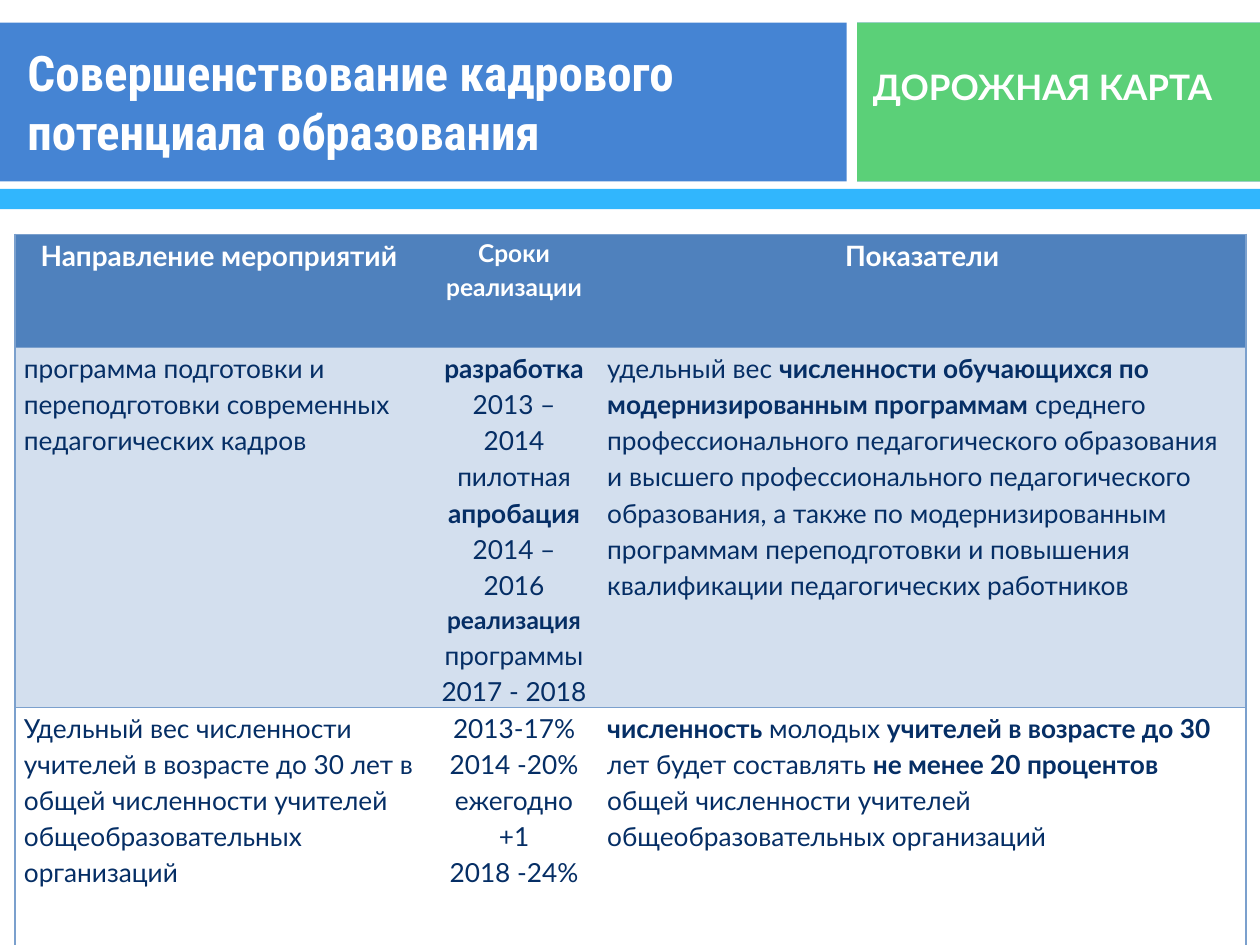
from lxml import etree
from pptx import Presentation
from pptx.dml.color import RGBColor
from pptx.enum.shapes import MSO_SHAPE
from pptx.enum.text import MSO_ANCHOR, PP_ALIGN
from pptx.oxml.ns import qn
from pptx.util import Inches, Pt

RECT = MSO_SHAPE.RECTANGLE
MIDDLE = MSO_ANCHOR.MIDDLE
LEFT, CENTER = PP_ALIGN.LEFT, PP_ALIGN.CENTER

WHITE = RGBColor(0xFF, 0xFF, 0xFF)
BLUE = RGBColor(0x45, 0x84, 0xD3)
SKY = RGBColor(0x31, 0xB6, 0xFD)
GREEN = RGBColor(0x5B, 0xD0, 0x78)
HEADER = RGBColor(0x4F, 0x81, 0xBD)
BAND = RGBColor(0xD3, 0xDF, 0xEE)
NAVY = RGBColor(0x05, 0x2E, 0x65)
BORDER = RGBColor(0x7B, 0xA0, 0xCD)

BODY_FONT, TITLE_FONT = "Lato", "Roboto Condensed"
COL_WIDTHS = (3.29, 1.34, 5.14)
COL_MARGINS = (0.07, 0.09, 0.07)
ROW_HEIGHTS = (0.9, 2.85, 1.94)
ROW_FILLS = (HEADER, BAND, None)

# Each cell is a list of paragraphs, each paragraph a list of (text, size, bold) runs.
HEADINGS = [
    [[("Направление мероприятий ", 16, True)]],
    [[("Сроки реализации", 14, True)]],
    [[("Показатели", 16, True)]],
]
TRAINING = [
    [[("программа подготовки и переподготовки современных педагогических кадров", 15, False)]],
    [
        [("разработка", 15, True)],
        [("2013 – 2014", 15, False)],
        [("пилотная ", 15, False), ("апробация", 15, True)],
        [("2014 – 2016", 15, False)],
        [("реализация ", 14, True), ("программы", 15, False)],
        [("2017 - 2018", 15, False)],
    ],
    [[
        ("удельный вес ", 15, False),
        ("численности обучающихся по модернизированным программам", 15, True),
        (" среднего профессионального педагогического образования и высшего "
         "профессионального педагогического образования, а также по "
         "модернизированным программам переподготовки и повышения "
         "квалификации педагогических работников", 15, False),
    ]],
]
YOUNG_TEACHERS = [
    [[("Удельный вес численности учителей в возрасте до 30 лет в общей "
       "численности учителей общеобразовательных организаций", 15, False)]],
    [[(text, 15, False)] for text in ("2013-17%", "2014 -20%", "ежегодно +1", "2018 -24%")],
    [[
        ("численность", 15, True),
        (" молодых ", 15, False),
        ("учителей в возрасте до 30 ", 15, True),
        ("лет будет составлять ", 15, False),
        ("не менее 20 процентов ", 15, True),
        ("общей численности учителей общеобразовательных организаций", 15, False),
    ]],
]
ROWS = (HEADINGS, TRAINING, YOUNG_TEACHERS)


def add_bar(s, left, top, width, height, color):
    bar = s.shapes.add_shape(RECT, Inches(left), Inches(top), Inches(width), Inches(height))
    bar.shadow.inherit = False
    bar.fill.solid()
    bar.fill.fore_color.rgb = color
    bar.line.fill.background()


def style_run(r, font, size, bold, color):
    r.font.name = font
    r.font.size = Pt(size)
    r.font.bold = bold
    r.font.color.rgb = color


def add_label(s, left, top, width, height, text, font, size):
    box = s.shapes.add_textbox(Inches(left), Inches(top), Inches(width), Inches(height))
    tf = box.text_frame
    tf.word_wrap = True
    tf.vertical_anchor = MIDDLE
    tf.text = text
    style_run(tf.paragraphs[0].runs[0], font, size, True, WHITE)


def add_banner(s, left, top, width, height):
    split = left + 6.72
    add_bar(s, left, top, width, height, BLUE)
    add_bar(s, left, top + height + 0.06, width, 0.16, SKY)
    add_bar(s, split + 0.03, top, width - 6.75, height, GREEN)
    add_bar(s, split, top - 0.03, 0.08, height + 0.07, WHITE)
    add_label(s, left + 0.12, top + 0.11, 6.6, 1.03,
              "Совершенствование кадрового потенциала образования", TITLE_FONT, 28)
    add_label(s, split + 0.11, top + 0.31, 3, 0.4, "ДОРОЖНАЯ КАРТА", BODY_FONT, 20)


def set_borders(cell, visible):
    """Draw the sides named in visible (from "LRTB") and clear the others."""
    tc_pr = cell._tc.get_or_add_tcPr()
    for i, side in enumerate("LRTB"):
        ln = etree.Element(qn(f"a:ln{side}"), w=str(Pt(1)))
        if side in visible:
            fill = etree.SubElement(ln, qn("a:solidFill"))
            etree.SubElement(fill, qn("a:srgbClr"), val=str(BORDER))
        else:
            etree.SubElement(ln, qn("a:noFill"))
        tc_pr.insert(i, ln)


def fill_cell(cell, paragraphs, margin, align, color):
    cell.margin_left = cell.margin_right = Inches(margin)
    cell.margin_top = cell.margin_bottom = 0
    tf = cell.text_frame
    for i, runs in enumerate(paragraphs):
        p = tf.paragraphs[0] if i == 0 else tf.add_paragraph()
        p.alignment = align
        p.line_spacing = 1.15
        for text, size, bold in runs:
            r = p.add_run()
            r.text = text
            style_run(r, BODY_FONT, size, bold, color)


def add_roadmap(s, left, top, width, height):
    frame = s.shapes.add_table(len(ROWS), len(COL_WIDTHS), Inches(left), Inches(top),
                               Inches(width), Inches(height))
    table = frame.table
    table.first_row = table.horz_banding = False
    for column, size in zip(table.columns, COL_WIDTHS):
        column.width = Inches(size)
    last = len(COL_WIDTHS) - 1
    for i, (cells, fill) in enumerate(zip(ROWS, ROW_FILLS)):
        table.rows[i].height = Inches(ROW_HEIGHTS[i])
        for j, paragraphs in enumerate(cells):
            cell = table.cell(i, j)
            align = CENTER if i == 0 or j == 1 else LEFT
            fill_cell(cell, paragraphs, COL_MARGINS[j], align, WHITE if i == 0 else NAVY)
            if fill is None:
                cell.fill.background()
            else:
                cell.fill.solid()
                cell.fill.fore_color.rgb = fill
            set_borders(cell, "TB" + ("L" if j == 0 else "R" if j == last else ""))


def main():
    prs = Presentation()
    prs.slide_width, prs.slide_height = Inches(10), Inches(7.5)
    s = prs.slides.add_slide(prs.slide_layouts[6])
    add_banner(s, 0, 0.18, 10, 1.26)
    add_roadmap(s, 0.12, 1.86, sum(COL_WIDTHS), sum(ROW_HEIGHTS))
    prs.save("out.pptx")


if __name__ == "__main__":
    main()
